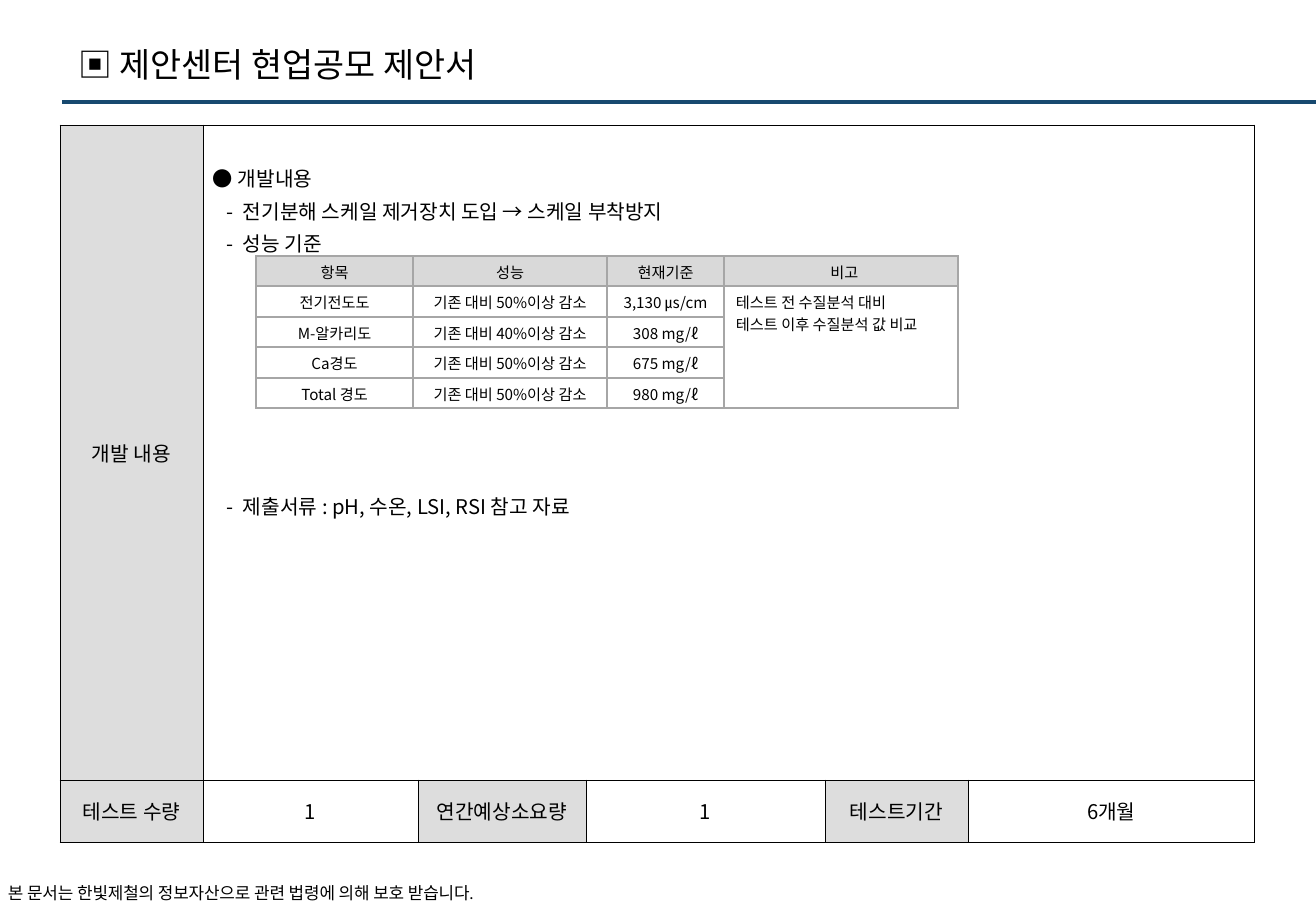
import pptx
import pptx.util
import pptx.dml.color
import pptx.enum.shapes
import pptx.enum.text
import pptx.oxml
import pptx.oxml.ns

PX = 914400 / 121.5
INK = {"text": "000000", "rule": "17496F", "label": "DDDDDD",
       "head": "D9D9D9", "grid": "A6A6A6", "white": "FFFFFF"}
FONT = "Noto Sans CJK KR"
MID = pptx.enum.text.MSO_ANCHOR.MIDDLE
LEFT = pptx.enum.text.PP_ALIGN.LEFT
CENTER = pptx.enum.text.PP_ALIGN.CENTER


def px(size):
    """Turn a length in px into EMU."""
    return pptx.util.Emu(round(size * PX))


def rgb(name):
    """Look up a colour by its name."""
    return pptx.dml.color.RGBColor.from_string(INK[name])


def add(node, tag, **attrs):
    """Append a drawing element to a node and return it."""
    kid = node.makeelement(pptx.oxml.ns.qn(tag), attrs)
    node.append(kid)
    return kid


def style(para, size, font=FONT, align=LEFT, gap=0):
    """Set the font, alignment and spacing of one paragraph."""
    para.alignment = align
    para.space_before = para.space_after = pptx.util.Pt(gap)
    para.font.size = pptx.util.Pt(size)
    para.font.name = font
    para.font.color.rgb = rgb("text")
    add(para._p.pPr.find(pptx.oxml.ns.qn("a:defRPr")), "a:ea", typeface=font)


def bullet(para, mark, left, hang):
    """Give a paragraph a hanging bullet mark."""
    props = para._p.get_or_add_pPr()
    props.set("marL", str(px(left)))
    props.set("indent", str(-px(hang)))
    add(props, "a:buFont", typeface=FONT)
    add(props, "a:buChar", char=mark)


def pad(item, left, top, right, bottom):
    """Set the inner margins of a cell or text frame."""
    item.margin_left, item.margin_top = px(left), px(top)
    item.margin_right, item.margin_bottom = px(right), px(bottom)


def border(cell, name, width):
    """Draw all four sides of a cell."""
    props = cell._tc.get_or_add_tcPr()
    for spot, side in enumerate(("a:lnL", "a:lnR", "a:lnT", "a:lnB")):
        line = props.makeelement(pptx.oxml.ns.qn(side), {"w": str(pptx.util.Pt(width))})
        props.insert(spot, line)
        add(add(line, "a:solidFill"), "a:srgbClr", val=INK[name])


def grid(slide, left, top, cols, rows, line, width):
    """Add a plain table with the given column and row sizes."""
    table = slide.shapes.add_table(len(rows), len(cols), px(left), px(top),
                                   px(sum(cols)), px(sum(rows))).table
    table.first_row = table.horz_banding = False
    for col, size in zip(table.columns, cols):
        col.width = px(size)
    for row, size in zip(table.rows, rows):
        row.height = px(size)
    for cell in table.iter_cells():
        cell.fill.solid()
        cell.fill.fore_color.rgb = rgb("white")
        border(cell, line, width)
    return table


def label(slide, left, top, wide, high, text, size, font, inset=(0, 0)):
    """Add a one-line text box."""
    frame = slide.shapes.add_textbox(px(left), px(top), px(wide), px(high)).text_frame
    frame.word_wrap = True
    frame.vertical_anchor = MID
    pad(frame, *inset, *inset)
    frame.text = text
    style(frame.paragraphs[0], size, font)


def header(slide, left, top, wide):
    """Add the title and the rule below it."""
    label(slide, left + 4, top, 984, 56, "▣ 제안센터 현업공모 제안서", 20, FONT, (12, 6))
    rule = slide.shapes.add_connector(pptx.enum.shapes.MSO_CONNECTOR.STRAIGHT,
                                      px(left), px(top + 66), px(left + wide), px(top + 66))
    rule.line.color.rgb = rgb("rule")
    rule.line.width = pptx.util.Pt(2.25)
    add(rule._element.spPr, "a:effectLst")


def body(cell):
    """Fill the large cell with the bulleted plan."""
    items = [("●", "개발내용", 25, 25, 1),
             ("-", "전기분해 스케일 제거장치 도입 → 스케일 부착방지", 30, 16, 1),
             ("-", "성능 기준", 30, 16, 1),
             ("-", "제출서류 : pH, 수온, LSI, RSI 참고 자료", 30, 16, 137)]
    pad(cell, 10, 38, 5, 5)
    cell.text = "\n".join(item[1] for item in items)
    for para, (mark, _, left, hang, gap) in zip(cell.text_frame.paragraphs, items):
        bullet(para, mark, left, hang)
        style(para, 12, gap=1)
        para.space_before = pptx.util.Pt(gap)
    cell.text_frame.paragraphs[0].space_before = pptx.util.Pt(0)


def form(slide, left, top):
    """Add the outer form with its labels and values."""
    table = grid(slide, left, top, [143, 215, 168, 239, 143, 287], [655, 62], "text", 0.5)
    table.cell(0, 1).merge(table.cell(0, 5))
    body(table.cell(0, 1))
    facts = ["테스트 수량", "1", "연간예상소요량", "1", "테스트기간", "6개월"]
    cells = [(table.cell(0, 0), "개발 내용", True)]
    cells += [(table.cell(1, col), text, col % 2 == 0) for col, text in enumerate(facts)]
    for cell, text, named in cells:
        pad(cell, 5, 5, 5, 5)
        cell.vertical_anchor = MID
        cell.text = text
        style(cell.text_frame.paragraphs[0], 12, align=CENTER)
        if named:
            cell.fill.fore_color.rgb = rgb("label")


def limits(slide, left, top):
    """Add the table of performance limits."""
    data = [["항목", "성능", "현재기준", "비고"],
            ["전기전도도", "기존 대비 50%이상 감소", "3,130 ㎲/cm",
             "테스트 전 수질분석 대비\n테스트 이후 수질분석 값 비교"],
            ["M-알카리도", "기존 대비 40%이상 감소", "308 mg/ℓ"],
            ["Ca경도", "기존 대비 50%이상 감소", "675 mg/ℓ"],
            ["Total 경도", "기존 대비 50%이상 감소", "980 mg/ℓ"]]
    table = grid(slide, left, top, [157, 194, 117, 234], [30, 31, 30, 31, 30], "grid", 1)
    table.cell(1, 3).merge(table.cell(4, 3))
    for row, texts in enumerate(data):
        for col, text in enumerate(texts):
            cell = table.cell(row, col)
            pad(cell, 12 if col == 3 else 5, 5, 5, 3)
            cell.text = text
            for para in cell.text_frame.paragraphs:
                style(para, 9, align=LEFT if row and col == 3 else CENTER)
            if row == 0:
                cell.fill.fore_color.rgb = rgb("head")


def main():
    """Build and save the slide."""
    deck = pptx.Presentation()
    deck.slide_width, deck.slide_height = px(1316), px(911)
    slide = deck.slides.add_slide(deck.slide_layouts[6])
    label(slide, 8, 882, 510, 21,
          "본 문서는 한빛제철의 정보자산으로 관련 법령에 의해 보호 받습니다.", 10, "Calibri")
    header(slide, 62, 36, 1254)
    form(slide, 60, 125)
    limits(slide, 256, 256)
    deck.save("out.pptx")


if __name__ == "__main__":
    main()
